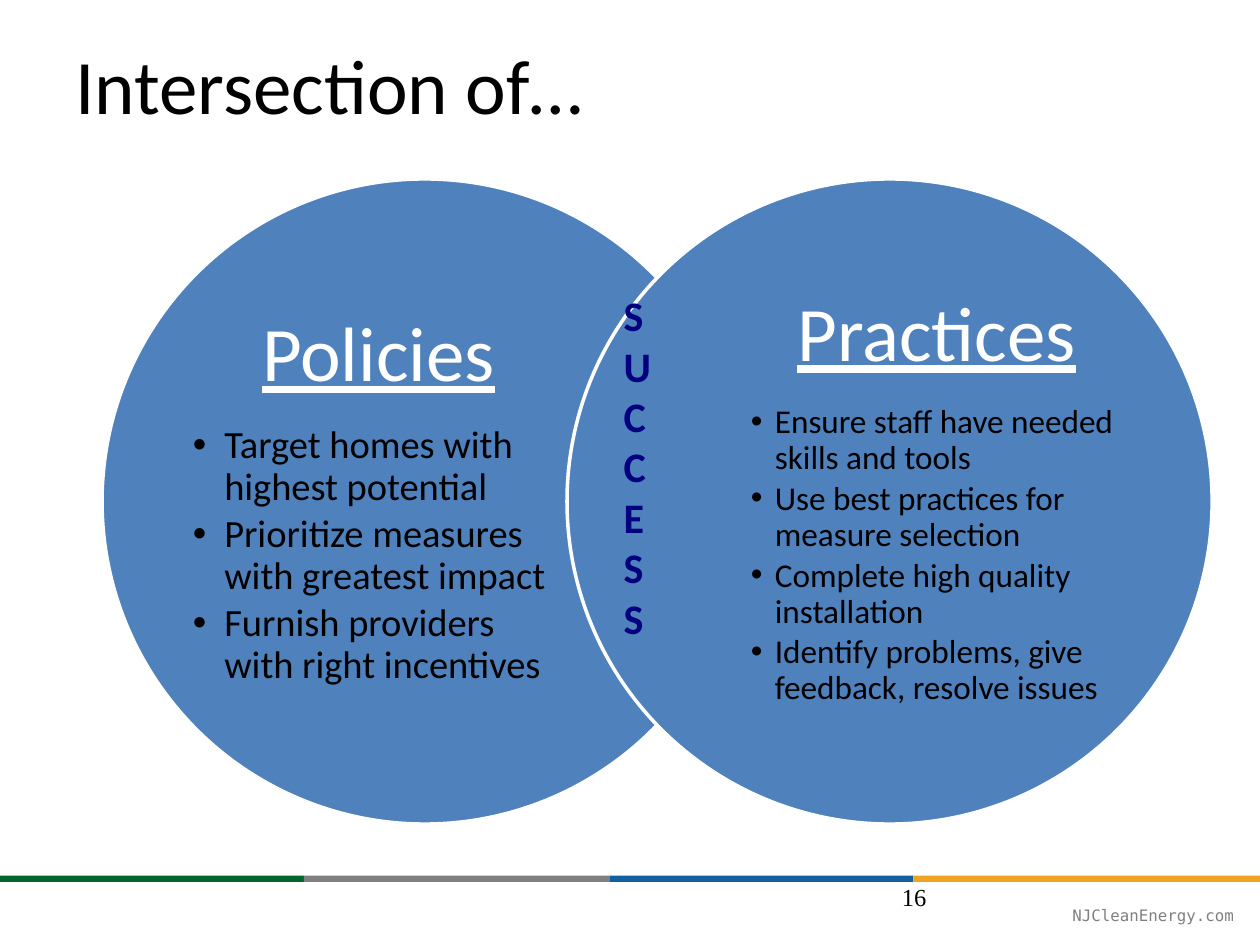
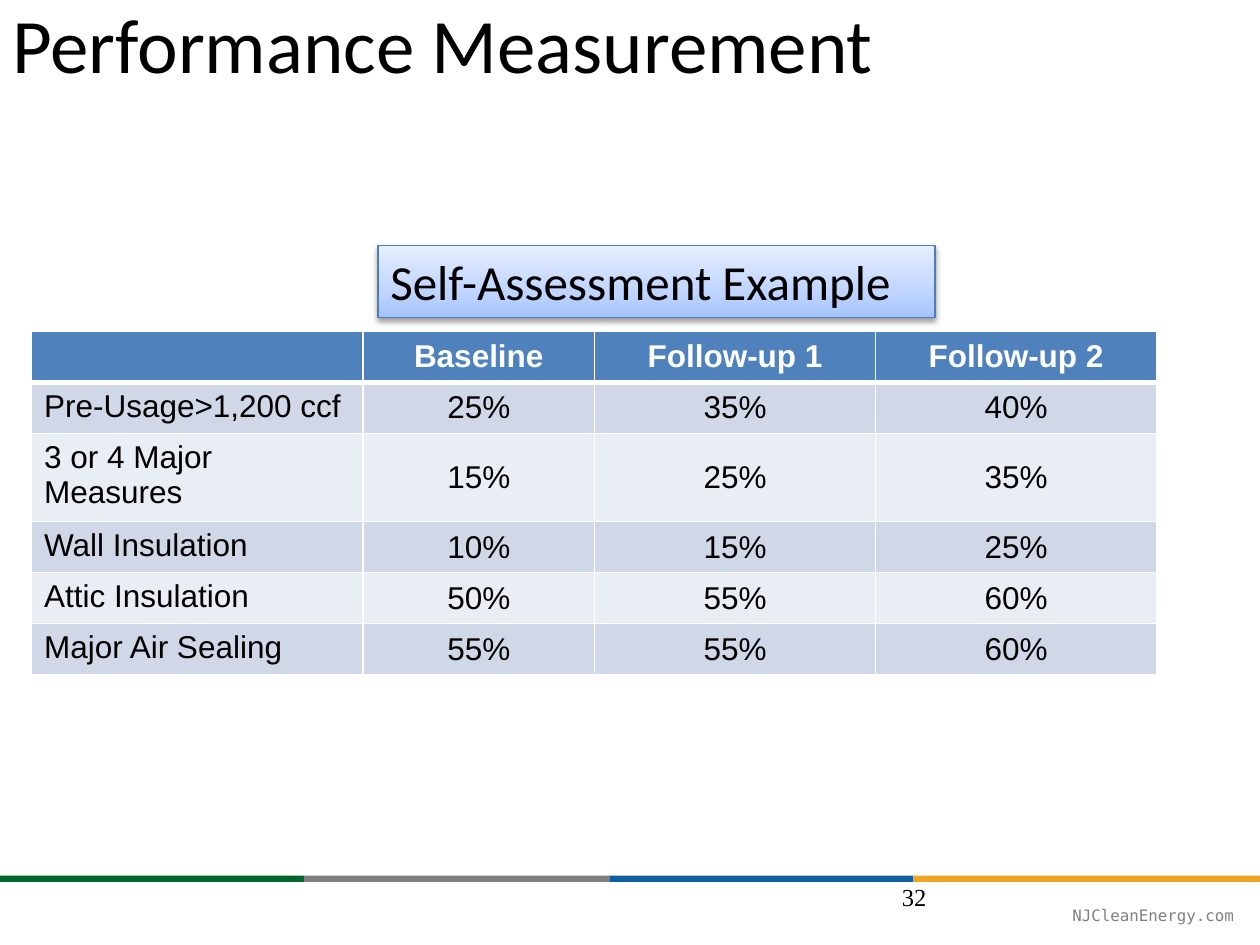
from copy import deepcopy
from itertools import pairwise

from lxml.etree import SubElement
from pptx import Presentation
from pptx.dml.color import RGBColor
from pptx.enum.shapes import MSO_SHAPE
from pptx.enum.text import MSO_ANCHOR, MSO_AUTO_SIZE, PP_ALIGN
from pptx.oxml.ns import qn
from pptx.util import Inches, Pt

CELL = Inches(0.25)
COLUMNS, ROWS = 40, 30

WHITE = RGBColor(0xFF, 0xFF, 0xFF)
BLACK = RGBColor(0x00, 0x00, 0x00)
BLUE = RGBColor(0x4F, 0x81, 0xBD)
NAVY = RGBColor(0x00, 0x00, 0x81)
GREEN = RGBColor(0x00, 0x65, 0x2A)
GRAY = RGBColor(0x80, 0x80, 0x80)
DEEP_BLUE = RGBColor(0x10, 0x5F, 0x9E)
AMBER = RGBColor(0xEE, 0xA4, 0x20)
BANNER_EDGE = RGBColor(0x4B, 0x7E, 0xBC)
BANNER_STOPS = [
    (0, RGBColor(0xA4, 0xC4, 0xFF)),
    (0.35, RGBColor(0xBF, 0xD4, 0xFF)),
    (1, RGBColor(0xE6, 0xEE, 0xFF)),
]
ROW_FILLS = [RGBColor(0xE9, 0xED, 0xF4), RGBColor(0xD0, 0xD8, 0xE8)]

BODY_FONT = "Calibri"
BAND_EDGES = [0, 9.65, 19.35, 29, COLUMNS]
BAND_COLORS = [GREEN, GRAY, DEEP_BLUE, AMBER]
BAND_TOP = 27.8

CIRCLE_SIZE = 20.48
TOPICS = [
    (3.24, 6.12, "Policies", 22, 0.25, [
        "Target homes with highest potential",
        "Prioritize measures with greatest impact",
        "Furnish providers with right incentives",
    ]),
    (18, 23.84, "Practices", 19, 0.19, [
        "Ensure staff have needed skills and tools",
        "Use best practices for measure selection",
        "Complete high quality installation",
        "Identify problems, give feedback, resolve issues",
    ]),
]
ASSESSMENT = [
    ("", "Baseline", "Follow-up 1", "Follow-up 2"),
    ("Pre-Usage>1,200 ccf", "25%", "35%", "40%"),
    ("3 or 4 Major Measures", "15%", "25%", "35%"),
    ("Wall Insulation", "10%", "15%", "25%"),
    ("Attic Insulation", "50%", "55%", "60%"),
    ("Major Air Sealing", "55%", "55%", "60%"),
]
ASSESSMENT_COLUMNS = [10.52, 7.36, 8.92, 8.92]
ASSESSMENT_ROW = 1.62


def area(*cells):
    """Turn grid columns and rows into slide lengths."""
    return [round(cell * CELL) for cell in cells]


def style(paragraph, size, color, font=BODY_FONT, bold=False, underline=False):
    """Set the font of a whole paragraph."""
    paragraph.font.name = font
    paragraph.font.size = Pt(size)
    paragraph.font.color.rgb = color
    paragraph.font.bold = bold
    paragraph.font.underline = underline


def add_text(slide, place, text, size, color, **font):
    """Add a wrapping one-paragraph text box and return its frame."""
    frame = slide.shapes.add_textbox(*area(*place)).text_frame
    frame.word_wrap = True
    frame.text = text
    style(frame.paragraphs[0], size, color, **font)
    return frame


def clear_margins(frame):
    """Remove the inner margins of a text frame."""
    frame.margin_left = frame.margin_right = 0
    frame.margin_top = frame.margin_bottom = 0


def add_plain_shape(slide, kind, place, fill):
    """Add a flat filled shape without outline."""
    shape = slide.shapes.add_shape(kind, *area(*place))
    shape.shadow.inherit = False
    shape.fill.solid()
    shape.fill.fore_color.rgb = fill
    shape.line.fill.background()
    return shape


def add_page(deck, title, title_corner, number):
    """Add a slide with the shared bands, footer, title and page number."""
    slide = deck.slides.add_slide(deck.slide_layouts[6])
    for (left, right), color in zip(pairwise(BAND_EDGES), BAND_COLORS):
        band = (left, BAND_TOP, right - left, 0.2)
        add_plain_shape(slide, MSO_SHAPE.RECTANGLE, band, color)
    footer = add_text(slide, (20, 28.64, 19.16, 0.68), "NJCleanEnergy.com",
                      9, GRAY, font="DejaVu Sans Mono")
    clear_margins(footer)
    footer.paragraphs[0].alignment = PP_ALIGN.RIGHT
    footer.paragraphs[0].line_spacing = 1.2
    add_text(slide, (*title_corner, 34.5, 5.8), title, 44, BLACK)
    add_text(slide, (28.24, BAND_TOP, 9, 1.6), str(number), 14, BLACK,
             font="Times New Roman")
    return slide


def add_bullet(frame, text, size, indent):
    """Append a bulleted paragraph with a hanging indent."""
    paragraph = frame.add_paragraph()
    paragraph.text = text
    paragraph.line_spacing = 0.9
    paragraph.space_after = Pt(size * 0.15)
    properties = paragraph._p.get_or_add_pPr()
    properties.set("marL", str(Inches(indent)))
    properties.set("indent", str(-Inches(indent)))
    SubElement(properties, qn("a:buFont"), typeface="Arial")
    SubElement(properties, qn("a:buChar"), char="•")
    style(paragraph, size, BLACK)


def add_topic(slide, circle_left, text_left, heading, size, indent, points):
    """Add one circle of the diagram with its heading and bullets."""
    place = (circle_left, 5.68, CIRCLE_SIZE, CIRCLE_SIZE)
    circle = add_plain_shape(slide, MSO_SHAPE.OVAL, place, BLUE)
    circle.line.color.rgb = WHITE
    circle.line.width = Pt(2)
    frame = add_text(slide, (text_left, 8.08, 11.8, 15.64), heading, 44, WHITE,
                     underline=True)
    clear_margins(frame)
    frame.vertical_anchor = MSO_ANCHOR.MIDDLE
    head = frame.paragraphs[0]
    head.alignment = PP_ALIGN.CENTER
    head.line_spacing = 0.9
    head.space_after = Pt(44 * 0.35)
    for point in points:
        add_bullet(frame, point, size, indent)


def add_stacked_word(slide, place, word):
    """Add a word whose letters stand one below another."""
    frame = add_text(slide, place, word, 24, NAVY, bold=True)
    frame.word_wrap = False
    frame.auto_size = MSO_AUTO_SIZE.SHAPE_TO_FIT_TEXT
    frame._txBody.bodyPr.set("vert", "wordArtVert")


def add_banner(slide, place, text):
    """Add a gradient caption box with a soft shadow."""
    banner = add_plain_shape(slide, MSO_SHAPE.RECTANGLE, place, WHITE)
    banner.line.color.rgb = BANNER_EDGE
    banner.line.width = Pt(0.75)
    banner.fill.gradient()
    banner.fill.gradient_angle = 90
    properties = banner._element.spPr
    stops = properties.find(".//" + qn("a:gsLst"))
    stops.append(deepcopy(stops[0]))
    for stop, (position, color) in zip(banner.fill.gradient_stops, BANNER_STOPS):
        stop.position = position
        stop.color.rgb = color
    shadow = SubElement(properties.find(qn("a:effectLst")), qn("a:outerShdw"),
                        blurRad=str(Pt(3.1)), dist=str(Pt(1.6)),
                        dir="5400000", rotWithShape="0")
    tint = SubElement(shadow, qn("a:srgbClr"), val=str(BLACK))
    SubElement(tint, qn("a:alpha"), val="38000")
    frame = banner.text_frame
    frame.word_wrap = True
    frame.vertical_anchor = MSO_ANCHOR.TOP
    frame.text = text
    frame.paragraphs[0].alignment = PP_ALIGN.LEFT
    style(frame.paragraphs[0], 28, BLACK)


def set_borders(cell, bottom_width):
    """Draw white borders round a cell, before its fill is set."""
    properties = cell._tc.get_or_add_tcPr()
    for side, width in zip("LRTB", (1, 1, 1, bottom_width)):
        line = SubElement(properties, qn(f"a:ln{side}"), w=str(Pt(width)))
        fill = SubElement(line, qn("a:solidFill"))
        SubElement(fill, qn("a:srgbClr"), val=str(WHITE))


def add_assessment(slide, left, top):
    """Add the table of shares per measure and follow-up."""
    place = area(left, top, sum(ASSESSMENT_COLUMNS),
                 ASSESSMENT_ROW * len(ASSESSMENT))
    table = slide.shapes.add_table(len(ASSESSMENT), len(ASSESSMENT_COLUMNS),
                                   *place).table
    for column, width in zip(table.columns, area(*ASSESSMENT_COLUMNS)):
        column.width = width
    for r, values in enumerate(ASSESSMENT):
        header = r == 0
        for c, value in enumerate(values):
            cell = table.cell(r, c)
            set_borders(cell, 3 if header else 1)
            cell.fill.solid()
            cell.fill.fore_color.rgb = BLUE if header else ROW_FILLS[r % 2]
            cell.text = value
            paragraph = cell.text_frame.paragraphs[0]
            if c > 0:
                cell.vertical_anchor = MSO_ANCHOR.MIDDLE
                paragraph.alignment = PP_ALIGN.CENTER
            style(paragraph, 18, WHITE if header else BLACK, font="Arial",
                  bold=header)


def main():
    """Build and save the two slides."""
    deck = Presentation()
    deck.slide_width, deck.slide_height = area(COLUMNS, ROWS)

    intersection = add_page(deck, "Intersection of…", (2, 1), 16)
    for topic in TOPICS:
        add_topic(intersection, *topic)
    add_stacked_word(intersection, (19.4, 9, 2.72, 13.8), "SUCCESS")

    measurement = add_page(deck, "Performance Measurement", (0, -0.32), 32)
    add_assessment(measurement, 1, 10.52)
    add_banner(measurement, (12, 7.8, 17.68, 2.28), "Self-Assessment Example")

    deck.save("out.pptx")


if __name__ == "__main__":
    main()
